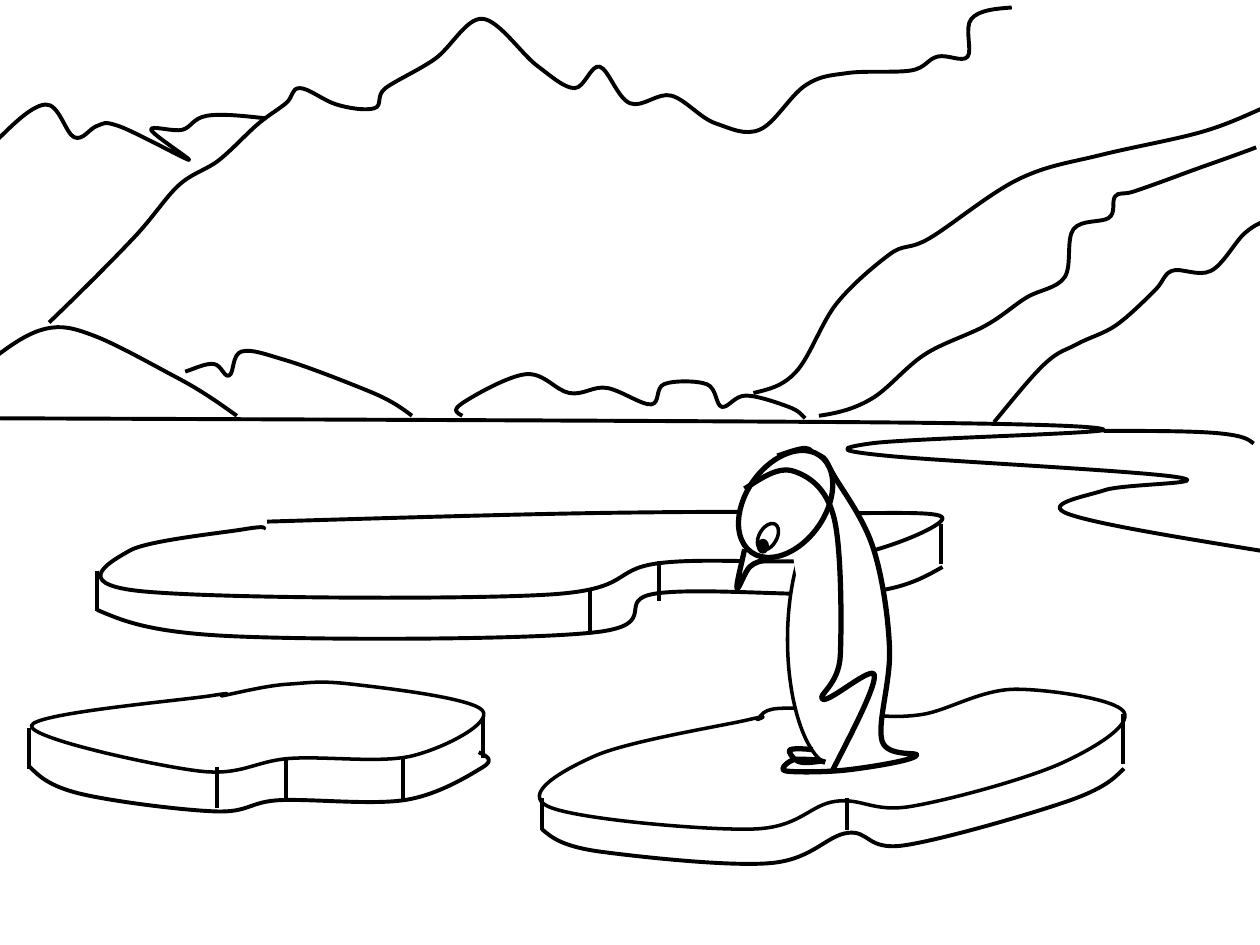
from pptx import Presentation
from pptx.dml.color import RGBColor
from pptx.enum.shapes import MSO_CONNECTOR, MSO_SHAPE
from pptx.oxml.xmlchemy import OxmlElement
from pptx.util import Cm, Pt

# Drawing points are whole steps of this grid, counted from the box corner
GRID = Cm(0.0254)
INK, SNOW = "000000", "FFFFFF"
THIN, MEDIUM, THICK = 2, 2.25, 3


def colour(value):
    return RGBColor.from_string(value)


def style(shape, weight, fill=None):
    shape.shadow.inherit = False
    shape.line.color.rgb = colour(INK)
    shape.line.width = Pt(weight)
    if fill:
        shape.fill.solid()
        shape.fill.fore_color.rgb = colour(fill)
    else:
        shape.fill.background()


def blend(start, end, share):
    return tuple(a + (b - a) * share for a, b in zip(start, end))


def handle(anchor, behind, ahead):
    """Control point beside an anchor, parallel to the line joining its neighbours."""
    return tuple(a + (n - b) / 6 for a, b, n in zip(anchor, behind, ahead))


def smooth(points, closed):
    """Control points and anchors of a cubic spline through the points."""
    if closed:
        ring = [points[-1], *points, *points[:2]]
    else:
        ring = [points[0], *points, points[-1]]
    result = []
    for before, start, end, after in zip(ring, ring[1:], ring[2:], ring[3:]):
        leave = handle(start, before, end)
        arrive = handle(end, after, start)
        if before == start:
            leave = blend(start, arrive, 0.5)
        if after == end:
            arrive = blend(end, leave, 0.5)
        result += [leave, arrive, end]
    return [(round(x), round(y)) for x, y in result]


def curve(shapes, box, points, weight=MEDIUM, fill=None, closed=False):
    """Smooth outline through the points."""
    builder = shapes.build_freeform(*points[0], scale=GRID)
    builder.add_line_segments(smooth(points, closed), close=closed)
    shape = builder.convert_to_shape(*box)
    lines = shape._element.xpath(".//a:lnTo")
    for start in range(0, len(lines), 3):
        bend = OxmlElement("a:cubicBezTo")
        lines[start].addprevious(bend)
        for line in lines[start:start + 3]:
            bend.append(line[0])
            line.getparent().remove(line)
    style(shape, weight, fill)


def edge(shapes, box, x, y, depth):
    """Upright edge of an ice floe."""
    across, down = box[0] + x * GRID, box[1] + y * GRID
    line = shapes.add_connector(
        MSO_CONNECTOR.STRAIGHT, across, down, across, down + depth * GRID)
    line.line.color.rgb = colour(INK)
    line.line.width = Pt(MEDIUM)
    line._element.spPr.append(OxmlElement("a:effectLst"))


def oval(shapes, box, x, y, width, height, weight, fill=SNOW, turn=0):
    shape = shapes.add_shape(
        MSO_SHAPE.OVAL, box[0] + x * GRID, box[1] + y * GRID,
        width * GRID, height * GRID)
    shape.rotation = turn
    style(shape, weight, fill)


def shoreline(page, box):
    curve(page.shapes, box, [
        (-2, 32), (665, 35), (876, 41), (691, 52), (706, 62),
        (936, 79), (877, 89), (848, 108), (1006, 138)])


def mountains(page, box):
    # Far range
    far = page.shapes.add_group_shape().shapes
    curve(far, box, [
        (-5, 114), (36, 83), (59, 109), (77, 100), (94, 100), (150, 127),
        (120, 103), (145, 103), (164, 92), (211, 94)])
    curve(far, box, [
        (39, 256), (106, 189), (142, 147), (174, 127), (203, 100), (227, 82),
        (238, 70), (267, 83), (297, 86), (306, 70), (345, 47), (383, 15),
        (426, 52), (456, 70), (476, 53), (500, 82), (533, 76), (568, 98),
        (603, 103), (639, 68), (673, 58), (723, 56), (744, 45), (768, 45),
        (771, 15), (803, 6)])

    near = [
        # Low hills, left to right
        [(-2, 282), (36, 261), (76, 267), (141, 300), (188, 330)],
        [(147, 295), (170, 289), (182, 298), (192, 279), (227, 286),
         (294, 311), (327, 330)],
        [(367, 330), (367, 320), (418, 297), (452, 312), (482, 308), (517, 321),
         (527, 305), (561, 305), (573, 323), (592, 314), (626, 323), (639, 332)],
        # Slopes on the right, back to front
        [(598, 312), (632, 295), (664, 241), (706, 202), (738, 189), (809, 142),
         (874, 123), (953, 105), (1002, 86)],
        [(650, 330), (691, 317), (733, 282), (783, 258), (815, 236), (845, 220),
         (852, 182), (880, 173), (885, 156), (900, 152), (939, 138), (997, 117)],
        [(789, 335), (830, 288), (855, 273), (886, 258), (917, 230), (930, 215),
         (961, 215), (988, 185), (1009, 174)],
        # Far waterline
        [(876, 342), (968, 344), (995, 352)],
    ]
    for outline in near:
        curve(page.shapes, box, outline)


def floe(shapes, box, top, rim, corners, depth, solid=True):
    """Ice floe: upper face, upright edges, then the lower rim."""
    if solid:
        curve(shapes, box, top, THIN, SNOW, closed=True)
    else:
        curve(shapes, box, top)
    for x, y in corners:
        edge(shapes, box, x, y, depth)
    curve(shapes, box, rim)


def front_floe(page, box):
    shapes = page.shapes.add_group_shape().shapes
    floe(shapes, box, [
        (195, 71), (72, 100), (35, 140), (197, 158), (263, 136), (323, 140),
        (444, 105), (492, 65), (406, 47), (332, 67), (283, 67), (232, 62),
        (209, 64), (201, 71)],
        [(30, 158), (77, 176), (212, 185), (273, 161), (317, 171), (447, 136),
         (492, 110)],
        [(30, 133), (272, 133)], 26)
    edge(shapes, box, 491, 67, 39)


def back_floe(page, box):
    floe(page.shapes.add_group_shape().shapes, box, [
        (209, 20), (194, 20), (103, 37), (110, 69), (434, 72), (523, 47),
        (666, 43), (748, 11), (655, 7), (486, 7), (212, 14)],
        [(77, 84), (185, 105), (471, 102), (521, 71), (679, 71), (748, 50)],
        [(77, 53), (747, 16), (523, 45), (468, 69)], 32, solid=False)


def left_floe(page, box):
    floe(page.shapes, box, [
        (169, 52), (25, 76), (158, 112), (230, 102), (327, 100), (383, 64),
        (279, 43), (229, 43), (178, 52)],
        [(23, 108), (64, 130), (171, 144), (223, 135), (321, 135), (383, 109),
         (380, 97)],
        [(172, 109), (227, 102), (320, 102), (383, 70), (23, 78)], 32)


def penguin(page, box):
    shapes = page.shapes
    # Belly and back
    oval(shapes, box, 125, 106, 78, 203, THIN)
    curve(shapes, box, [
        (117, 62), (139, 56), (147, 61), (155, 65), (161, 76), (192, 132),
        (206, 215), (200, 288), (227, 300), (173, 311), (124, 312), (130, 303),
        (145, 303), (155, 305)], THICK, SNOW)
    # Beak and head
    curve(shapes, box, [(91, 136), (85, 167), (95, 150), (111, 144)], THICK, SNOW)
    oval(shapes, box, 92, 53, 63, 94, THICK, turn=35.3)
    # Eye
    eye = shapes.add_group_shape().shapes
    oval(eye, box, 98, 119, 23, 14, THIN, turn=300.1)
    oval(eye, box, 102, 129, 7, 9, THIN, INK)
    # Hood with flipper, then foot
    curve(shapes, box, [
        (91, 88), (130, 74), (162, 111), (167, 220), (153, 255), (194, 236),
        (161, 311)], THICK)
    curve(shapes, box, [(145, 295), (127, 295), (133, 304), (152, 304)], THICK)


def main():
    deck = Presentation()
    deck.slide_width, deck.slide_height = Cm(25.4), Cm(19.05)
    page = deck.slides.add_slide(deck.slide_layouts[6])
    shoreline(page, (Cm(0), Cm(7.62)))
    mountains(page, (Cm(0), Cm(0)))
    front_floe(page, (Cm(10.16), Cm(12.7)))
    back_floe(page, (Cm(0), Cm(10.16)))
    left_floe(page, (Cm(0), Cm(12.7)))
    penguin(page, (Cm(12.7), Cm(7.62)))
    deck.save("out.pptx")


if __name__ == "__main__":
    main()
